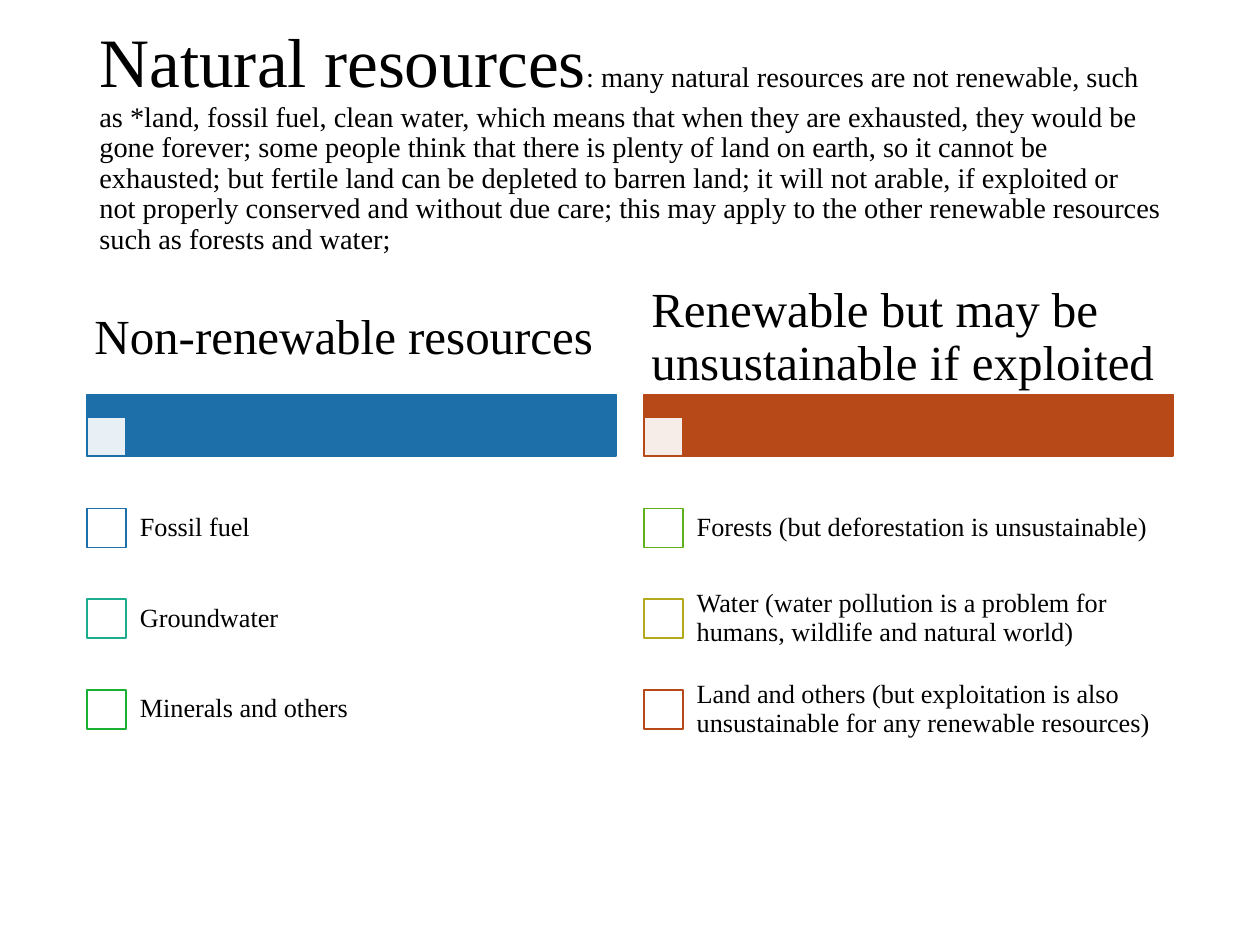
import lxml.etree
import pptx
import pptx.dml.color
import pptx.enum.shapes
import pptx.enum.text
import pptx.oxml.ns
import pptx.util

Inches = pptx.util.Inches
Pt = pptx.util.Pt

FONT = "Times New Roman"
COLORS = {
    "text": "000000", "white": "FFFFFF", "blue": "1D6FA9", "teal": "1CAC8E",
    "green": "1BAF34", "lime": "5FB11B", "olive": "B4A91A", "rust": "B74919",
}
TITLE = "Natural resources"
INTRO = (
    ": many natural resources are not renewable, such as *land, fossil fuel, "
    "clean water, which means that when they are exhausted, they would be gone "
    "forever; some people think that there is plenty of land on earth, so it "
    "cannot be exhausted; but fertile land can be depleted to barren land; it "
    "will not arable, if exploited or not properly conserved and without due "
    "care; this may apply to the other renewable resources such as forests and water;"
)
COLUMNS = [
    (0.69, "Non-renewable resources", "blue", [
        ("Fossil fuel", "blue"),
        ("Groundwater", "teal"),
        ("Minerals and others", "green"),
    ]),
    (5.11, "Renewable but may be unsustainable if exploited", "rust", [
        ("Forests (but deforestation is unsustainable)", "lime"),
        ("Water (water pollution is a problem for humans, wildlife and natural world)", "olive"),
        ("Land and others (but exploitation is also unsustainable for any renewable resources)", "rust"),
    ]),
]
COLUMN_WIDTH = 4.2
BOX_SIZE = 0.31
LABEL_OFFSET = 0.3
ROW_TOP = 3.83
ROW_HEIGHT = 0.72


def rgb(name):
    """Return the named colour."""
    return pptx.dml.color.RGBColor.from_string(COLORS[name])


def add_run(p, text, size, color="text"):
    """Append a formatted run to a paragraph."""
    r = p.add_run()
    r.text = text
    r.font.name = FONT
    r.font.size = Pt(size)
    r.font.color.rgb = rgb(color)


def add_text(slide, runs, left, top, width, height, inset_x=0.1, inset_y=0.05):
    """Add a vertically centred text box from (text, size) runs."""
    sp = slide.shapes.add_textbox(Inches(left), Inches(top), Inches(width), Inches(height))
    tf = sp.text_frame
    tf.word_wrap = True
    tf.vertical_anchor = pptx.enum.text.MSO_ANCHOR.MIDDLE
    tf.margin_left = tf.margin_right = Inches(inset_x)
    tf.margin_top = tf.margin_bottom = Inches(inset_y)
    p = tf.paragraphs[0]
    p.line_spacing = 0.9
    for text, size in runs:
        add_run(p, text, size)


def add_rect(slide, left, top, width, height, fill, line, opacity=100):
    """Add a rectangle with a thin outline and optional transparency."""
    sp = slide.shapes.add_shape(
        pptx.enum.shapes.MSO_SHAPE.RECTANGLE,
        Inches(left), Inches(top), Inches(width), Inches(height))
    sp.shadow.inherit = False
    sp.fill.solid()
    sp.fill.fore_color.rgb = rgb(fill)
    sp.line.color.rgb = rgb(line)
    sp.line.width = Pt(1)
    if opacity < 100:
        qn = pptx.oxml.ns.qn
        color = sp.fill._xPr.find(qn("a:solidFill")).find(qn("a:srgbClr"))
        lxml.etree.SubElement(color, qn("a:alpha"), val=str(opacity * 1000))


def add_item(slide, left, top, text, color):
    """Add one outlined box with its label."""
    box_top = top + (ROW_HEIGHT - BOX_SIZE) / 2
    add_rect(slide, left, box_top, BOX_SIZE, BOX_SIZE, "white", color)
    add_text(slide, [(text, 15)], left + LABEL_OFFSET, top,
             COLUMN_WIDTH - LABEL_OFFSET, ROW_HEIGHT, inset_x=0.12, inset_y=0.12)


def add_column(slide, left, heading, color, items):
    """Add a heading, its bar and the list below it."""
    add_rect(slide, left, 3.13, COLUMN_WIDTH, 0.49, color, color)
    add_rect(slide, left, 3.31, BOX_SIZE, BOX_SIZE, "white", color, opacity=90)
    add_text(slide, [(heading, 28)], left, 2.24, COLUMN_WIDTH, 0.89,
             inset_x=0.06, inset_y=0.04)
    for i, (text, item_color) in enumerate(items):
        add_item(slide, left, ROW_TOP + i * ROW_HEIGHT, text, item_color)


def main():
    """Build and save the slide."""
    prs = pptx.Presentation()
    prs.slide_width = Inches(10)
    prs.slide_height = Inches(7.5)
    slide = prs.slides.add_slide(prs.slide_layouts[6])
    add_text(slide, [(TITLE, 39.6), (INTRO, 16.2)], 0.69, 0.4, 8.62, 1.45)
    for column in COLUMNS:
        add_column(slide, *column)
    prs.save("out.pptx")


if __name__ == "__main__":
    main()
